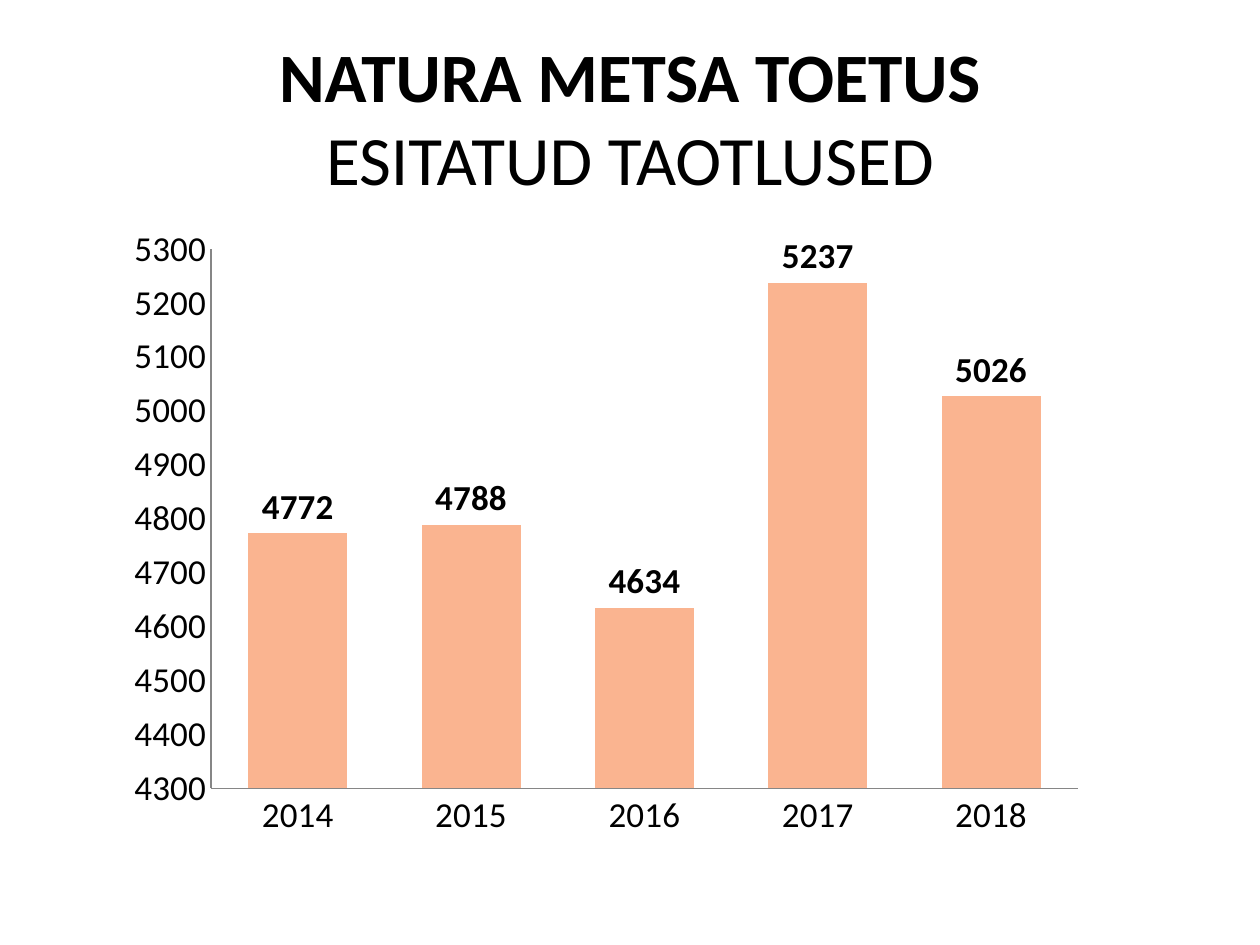
from pptx import Presentation
from pptx.chart.data import CategoryChartData
from pptx.dml.color import RGBColor
from pptx.enum.chart import XL_CHART_TYPE, XL_LABEL_POSITION, XL_TICK_MARK
from pptx.enum.text import MSO_ANCHOR, PP_ALIGN
from pptx.util import Pt

BLACK = RGBColor(0, 0, 0)
PEACH = RGBColor(0xFA, 0xB4, 0x90)
GREY = RGBColor(0x86, 0x86, 0x86)


class Deck:
    face = "Calibri"

    def __init__(self, wide, high):
        self.file = Presentation()
        self.file.slide_width = Pt(wide)
        self.file.slide_height = Pt(high)
        self.slide = None

    def page(self):
        self.slide = self.file.slides.add_slide(self.file.slide_layouts[5])

    def style(self, font, size, bold=False):
        font.name = self.face
        font.size = Pt(size)
        font.bold = bold
        font.color.rgb = BLACK

    def title(self, box, head, rest):
        shape = self.slide.shapes.title
        shape.left, shape.top, shape.width, shape.height = map(Pt, box)
        frame = shape.text_frame
        frame.vertical_anchor = MSO_ANCHOR.MIDDLE
        line = frame.paragraphs[0]
        line.text = f"{head}\v{rest}"
        line.alignment = PP_ALIGN.CENTER
        for run in line.runs:
            self.style(run.font, 39.6, run.text == head)

    def axis(self, axis):
        axis.has_major_gridlines = False
        axis.major_tick_mark = XL_TICK_MARK.NONE
        axis.minor_tick_mark = XL_TICK_MARK.NONE
        axis.format.line.color.rgb = GREY
        axis.format.line.width = Pt(0.75)
        self.style(axis.tick_labels.font, 20)

    def columns(self, box, name, counts, low, high, step):
        data = CategoryChartData()
        data.categories = list(counts)
        data.add_series(name, list(counts.values()))
        frame = self.slide.shapes.add_chart(
            XL_CHART_TYPE.COLUMN_CLUSTERED, *map(Pt, box), data)
        chart = frame.chart
        chart.has_legend = False
        chart.has_title = False
        self.style(chart.font, 10)
        self.axis(chart.category_axis)
        self.axis(chart.value_axis)
        scale = chart.value_axis
        scale.minimum_scale = low
        scale.maximum_scale = high
        scale.major_unit = step
        plot = chart.plots[0]
        plot.gap_width = 75
        plot.vary_by_categories = False
        bars = plot.series[0]
        bars.format.fill.solid()
        bars.format.fill.fore_color.rgb = PEACH
        marks = bars.data_labels
        marks.show_value = True
        marks.position = XL_LABEL_POSITION.OUTSIDE_END
        self.style(marks.font, 20, True)


def main():
    deck = Deck(720, 540)
    deck.page()
    deck.title((36, 21.6, 648, 90), "NATURA METSA TOETUS", "ESITATUD TAOTLUSED")
    counts = {"2014": 4772, "2015": 4788, "2016": 4634, "2017": 5237, "2018": 5026}
    deck.columns((65.5, 122.4, 561.6, 362.9), "Series 1", counts, 4300, 5300, 100)
    deck.file.save("out.pptx")


if __name__ == "__main__":
    main()
